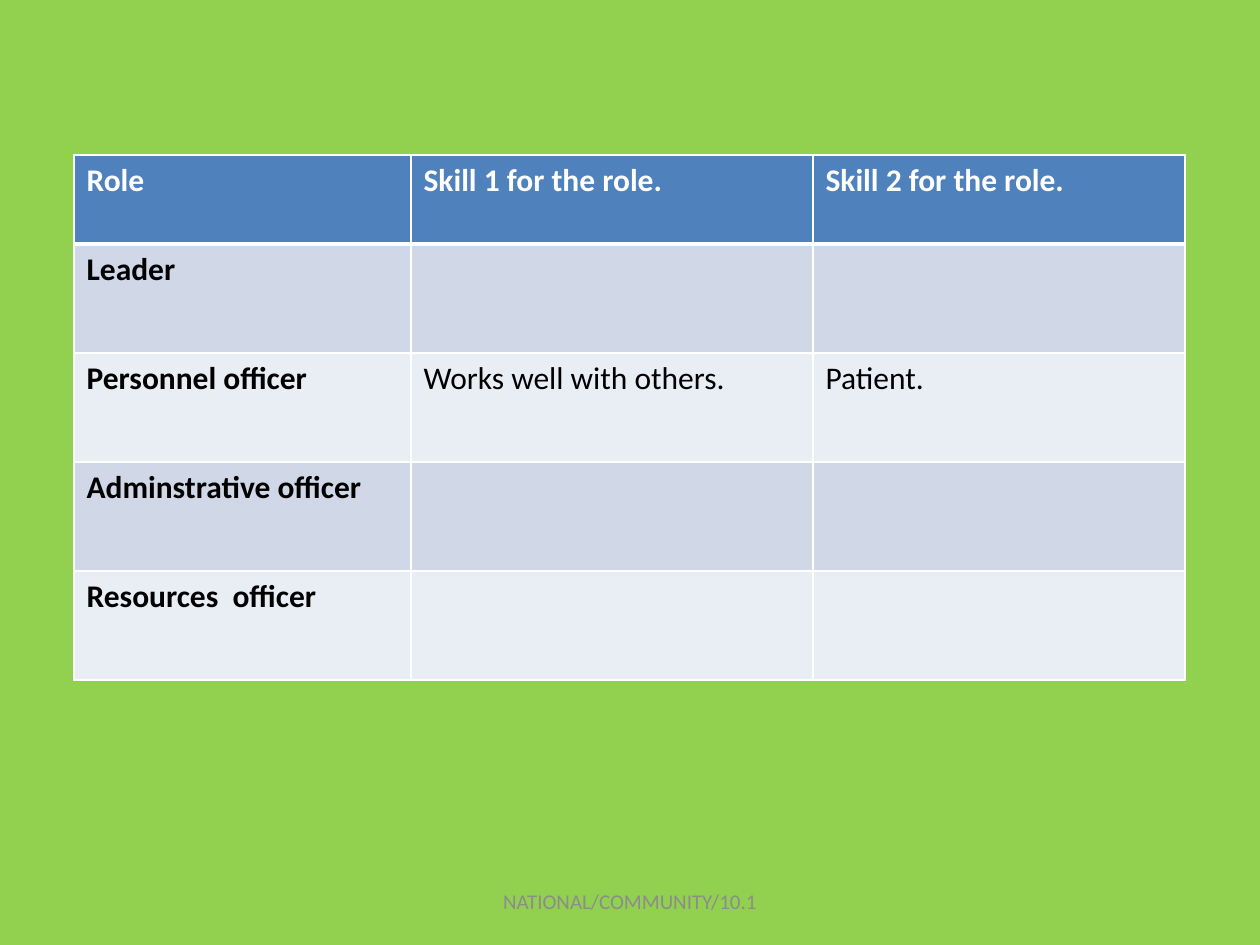
import pptx
import pptx.dml.color
import pptx.enum.text
import pptx.oxml
import pptx.oxml.ns
import pptx.util

RGBColor = pptx.dml.color.RGBColor
GREEN = RGBColor(0x92, 0xD0, 0x50)
HEADER_BLUE = RGBColor(0x4F, 0x81, 0xBD)
BANDS = (RGBColor(0xD0, 0xD8, 0xE8), RGBColor(0xE9, 0xED, 0xF4))
WHITE = RGBColor(0xFF, 0xFF, 0xFF)
BLACK = RGBColor(0x00, 0x00, 0x00)
GREY = RGBColor(0x8C, 0x8C, 0x8C)

PX_PER_INCH = 126
COLUMN_WIDTHS = (337, 402, 372)
HEADER_HEIGHT, ROLE_HEIGHT = 89, 109
ROLES = (
    ("Role", "Skill 1 for the role.", "Skill 2 for the role."),
    ("Leader", "", ""),
    ("Personnel officer", "Works well with others.", "Patient."),
    ("Adminstrative officer", "", ""),
    ("Resources  officer", "", ""),
)


def px(length):
    return pptx.util.Emu(round(length * 914400 / PX_PER_INCH))


def write(frame, text, *, size=18, color=BLACK, bold=False, align=None):
    paragraph = frame.paragraphs[0]
    paragraph.alignment = align
    run = paragraph.add_run()
    run.text = text
    run.font.name = "Calibri"
    run.font.size = pptx.util.Pt(size)
    run.font.bold = bold
    run.font.color.rgb = color


def add_borders(cell, **widths):
    """Draw white cell borders; widths are points keyed by side L, R, T, B."""
    properties = cell._tc.get_or_add_tcPr()
    for side, width in widths.items():
        properties.append(pptx.oxml.parse_xml(
            f'<a:ln{side} {pptx.oxml.ns.nsdecls("a")} w="{pptx.util.Pt(width)}">'
            f'<a:solidFill><a:srgbClr val="{WHITE}"/></a:solidFill></a:ln{side}>'
        ))


def add_roles_table(slide, left, top):
    height = HEADER_HEIGHT + ROLE_HEIGHT * (len(ROLES) - 1)
    table = slide.shapes.add_table(
        len(ROLES), len(COLUMN_WIDTHS),
        px(left), px(top), px(sum(COLUMN_WIDTHS)), px(height),
    ).table
    for column, width in zip(table.columns, COLUMN_WIDTHS):
        column.width = px(width)
    for r, role in enumerate(ROLES):
        header = r == 0
        table.rows[r].height = px(HEADER_HEIGHT if header else ROLE_HEIGHT)
        for c, text in enumerate(role):
            cell = table.cell(r, c)
            add_borders(cell, L=1, R=1, T=3 if r == 1 else 1, B=3 if header else 1)
            cell.fill.solid()
            cell.fill.fore_color.rgb = HEADER_BLUE if header else BANDS[(r - 1) % 2]
            if text:
                write(cell.text_frame, text, bold=header or c == 0,
                      color=WHITE if header else BLACK)


def add_footer(slide, left, top, width, height):
    frame = slide.shapes.add_textbox(px(left), px(top), px(width), px(height)).text_frame
    frame.word_wrap = True
    frame.vertical_anchor = pptx.enum.text.MSO_ANCHOR.MIDDLE
    write(frame, "NATIONAL/COMMUNITY/10.1", size=12, color=GREY,
          align=pptx.enum.text.PP_ALIGN.CENTER)


def main():
    deck = pptx.Presentation()
    deck.slide_width, deck.slide_height = px(1260), px(945)
    slide = deck.slides.add_slide(deck.slide_layouts[6])
    slide.background.fill.solid()
    slide.background.fill.fore_color.rgb = GREEN
    add_roles_table(slide, 74, 155)
    add_footer(slide, 430, 876, 400, 50)
    deck.save("out.pptx")


if __name__ == "__main__":
    main()
